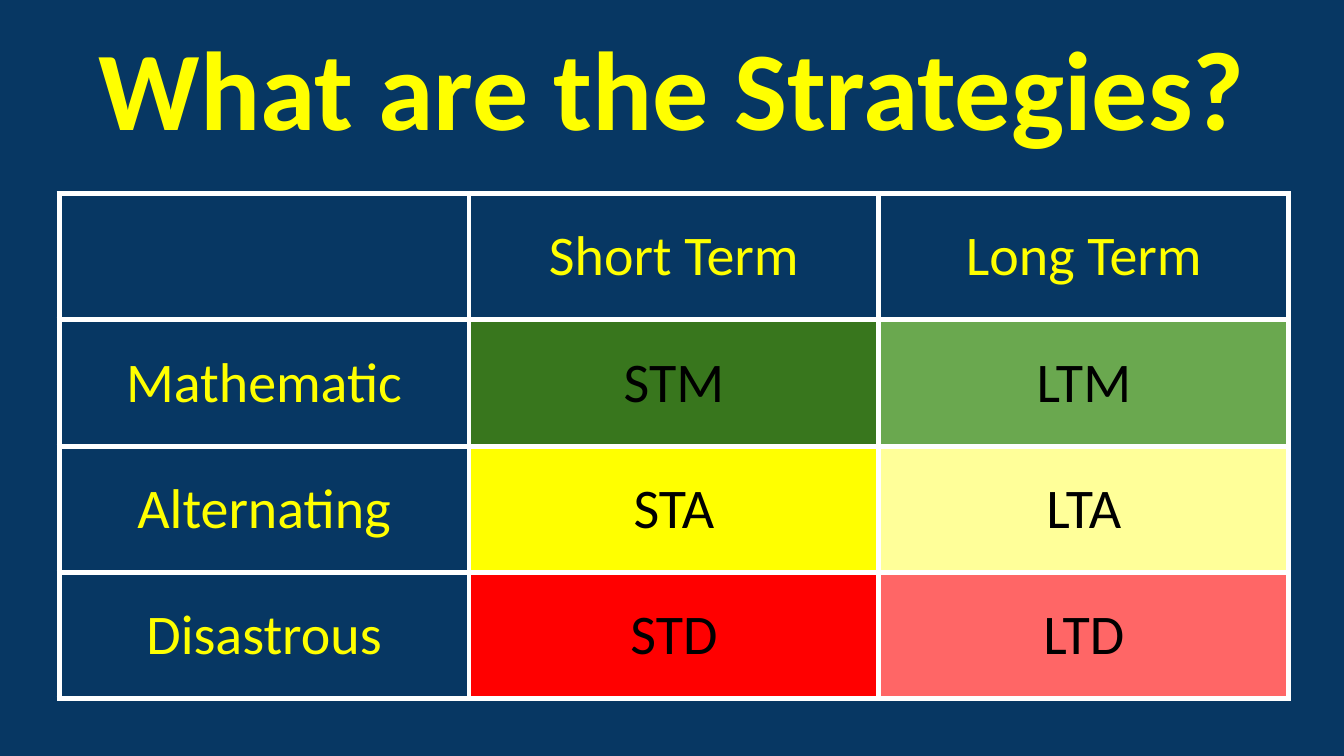
from lxml.etree import SubElement
from pptx import Presentation
from pptx.dml.color import RGBColor
from pptx.enum.text import MSO_ANCHOR, PP_ALIGN
from pptx.oxml.ns import qn
from pptx.util import Inches, Pt

NAVY, YELLOW, BLACK, WHITE = "073763", "FFFF00", "000000", "FFFFFF"
MARGIN = Inches(0.1)

# Each cell is its text and its fill; None leaves the background showing
STRATEGIES = [
    [("", None), ("Short Term", None), ("Long Term", None)],
    [("Mathematic", None), ("STM", "38761D"), ("LTM", "6AA84F")],
    [("Alternating", None), ("STA", "FFFF00"), ("LTA", "FFFF99")],
    [("Disastrous", None), ("STD", "FF0000"), ("LTD", "FF6666")],
]


def color(value):
    return RGBColor.from_string(value)


def write(frame, text, size=30, ink=YELLOW, bold=False):
    para = frame.paragraphs[0]
    para.alignment = PP_ALIGN.CENTER
    span = para.add_run()
    span.text = text
    span.font.name = "Calibri"
    span.font.size = Pt(size)
    span.font.bold = bold
    span.font.color.rgb = color(ink)


def set_margins(holder):
    holder.margin_left = holder.margin_right = MARGIN
    holder.margin_top = holder.margin_bottom = MARGIN
    holder.vertical_anchor = MSO_ANCHOR.MIDDLE


def add_title(page, text):
    box = page.shapes.add_textbox(Inches(0.34), Inches(0.08), Inches(9.32), Inches(1.11))
    box.text_frame.word_wrap = True
    set_margins(box.text_frame)
    write(box.text_frame, text, size=60, bold=True)


def add_borders(cell, ink=WHITE, width=3):
    properties = cell._tc.get_or_add_tcPr()
    for side in ("lnL", "lnR", "lnT", "lnB"):
        line = SubElement(properties, qn(f"a:{side}"), w=str(Pt(width)))
        fill = SubElement(line, qn("a:solidFill"))
        SubElement(fill, qn("a:srgbClr"), val=ink)


def fill_cell(cell, text, fill):
    set_margins(cell)
    # Borders must come before the fill in the cell properties
    add_borders(cell)
    if fill:
        cell.fill.solid()
        cell.fill.fore_color.rgb = color(fill)
    else:
        cell.fill.background()
    if text:
        write(cell.text_frame, text, ink=BLACK if fill else YELLOW)


def add_strategy_table(page, rows, column_width=3.05, row_height=0.94):
    row_count, column_count = len(rows), len(rows[0])
    table = page.shapes.add_table(
        row_count, column_count, Inches(0.44), Inches(1.44),
        Inches(column_width * column_count), Inches(row_height * row_count),
    ).table
    table.first_row = table.horz_banding = False
    for row_index, row in enumerate(rows):
        for column_index, (text, fill) in enumerate(row):
            fill_cell(table.cell(row_index, column_index), text, fill)


def main():
    # Widescreen deck, 16 to 9
    deck = Presentation()
    deck.slide_width = Inches(10)
    deck.slide_height = Inches(10 * 9 / 16)
    page = deck.slides.add_slide(deck.slide_layouts[6])

    # Background
    page.background.fill.solid()
    page.background.fill.fore_color.rgb = color(NAVY)

    # Content
    add_title(page, "What are the Strategies?")
    add_strategy_table(page, STRATEGIES)
    deck.save("out.pptx")


if __name__ == "__main__":
    main()
